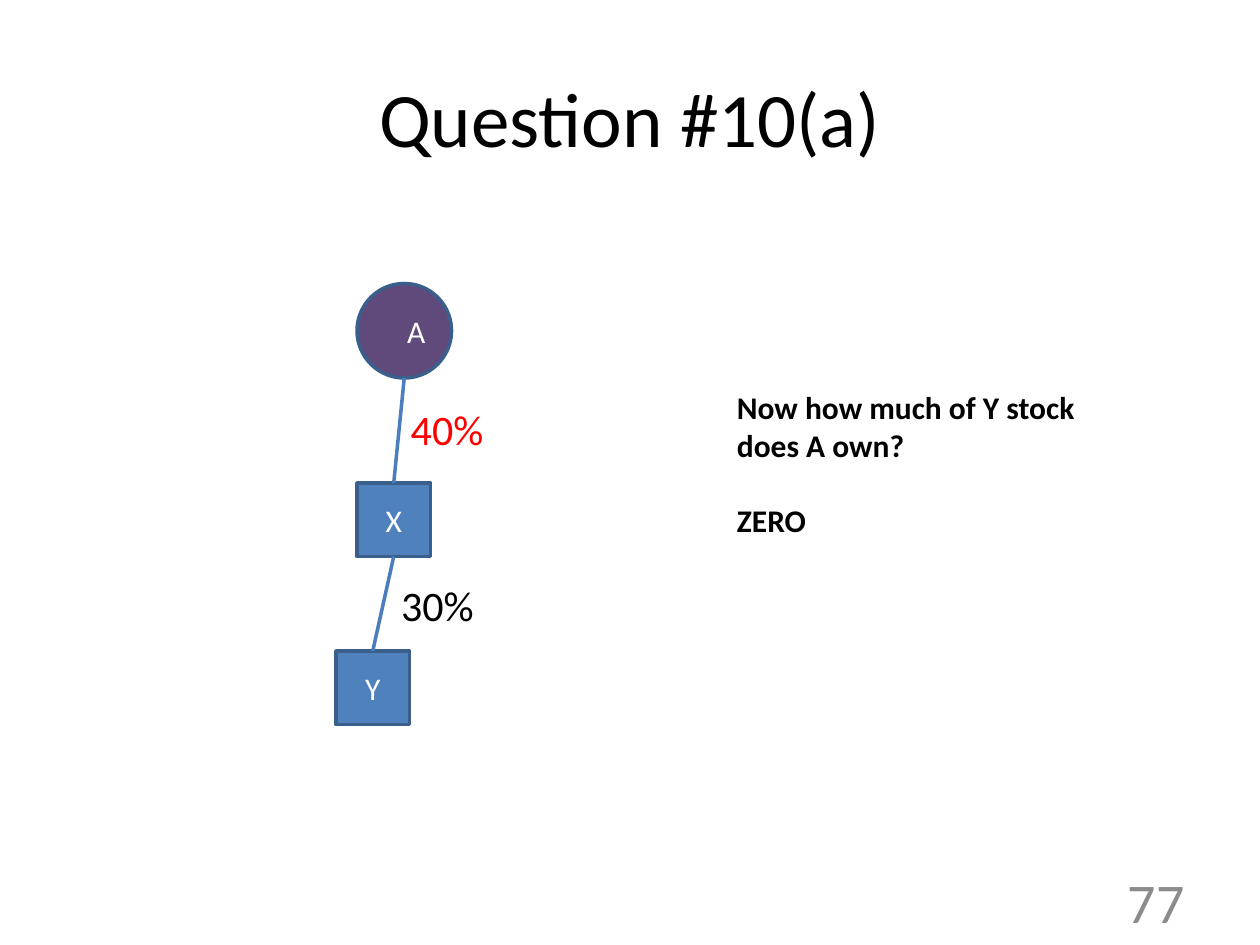
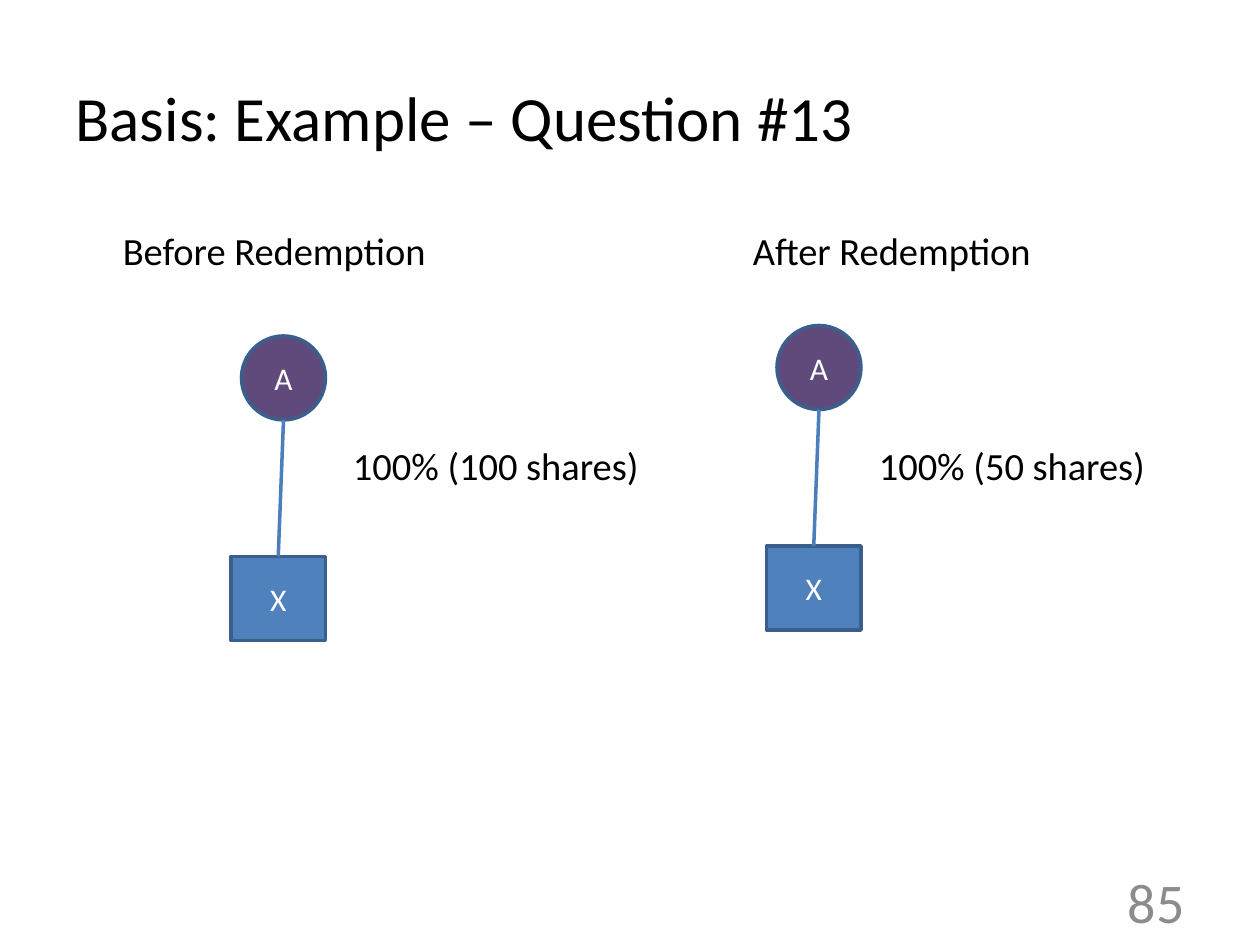
from dataclasses import dataclass

from lxml.etree import SubElement
from pptx import Presentation
from pptx.dml.color import RGBColor
from pptx.enum.shapes import MSO_CONNECTOR as CONN, MSO_SHAPE as SHAPE
from pptx.enum.text import MSO_ANCHOR as ANCHOR, MSO_AUTO_SIZE as AUTO, PP_ALIGN as ALIGN
from pptx.oxml.ns import qn
from pptx.util import Pt

# Shared style
FONT = "Calibri"
BLACK = RGBColor(0x00, 0x00, 0x00)
WHITE = RGBColor(0xFF, 0xFF, 0xFF)
RED = RGBColor(0xFF, 0x00, 0x00)
GRAY = RGBColor(0x8C, 0x8C, 0x8C)
PURPLE = RGBColor(0x60, 0x4A, 0x7B)
BLUE = RGBColor(0x4F, 0x81, 0xBD)
OUTLINE = RGBColor(0x3A, 0x5F, 0x8C)
LINK = RGBColor(0x4B, 0x7E, 0xBC)


@dataclass
class Owner:
    """A person (circle) or a corporation (box), in points."""
    label: str
    left: float
    top: float
    width: float
    height: float
    person: bool = False
    align: ALIGN = ALIGN.CENTER


@dataclass
class Line:
    """One line of body text with its gap, indent and second column, in points."""
    text: str
    indent: float
    gap: float = 0
    column: float = 0
    color: RGBColor = BLACK


def style(p, size: float, color: RGBColor, align: ALIGN = ALIGN.LEFT, bold: bool = False) -> None:
    p.alignment = align
    for r in p.runs:
        r.font.name, r.font.size, r.font.bold = FONT, Pt(size), bold
        r.font.color.rgb = color


def place(sp, left: float, top: float, width: float, height: float) -> None:
    sp.left, sp.top, sp.width, sp.height = Pt(left), Pt(top), Pt(width), Pt(height)


def add_slide(prs, title: str, size: float, align: ALIGN, number: str):
    s = prs.slides.add_slide(prs.slide_layouts[1])
    sp = s.shapes.title
    place(sp, 36, 21.6, 648, 90)
    sp.text_frame.text = title
    sp.text_frame.vertical_anchor = ANCHOR.MIDDLE
    style(sp.text_frame.paragraphs[0], size, BLACK, align)
    # Slide number
    tf = s.shapes.add_textbox(Pt(516), Pt(500.5), Pt(168), Pt(28.75)).text_frame
    tf.word_wrap = True
    tf.vertical_anchor = ANCHOR.MIDDLE
    tf.text = number
    style(tf.paragraphs[0], 32, GRAY, ALIGN.RIGHT)
    return s


def fill_body(s, lines: list[Line], size: float, inset: float = 3.6) -> None:
    sp = s.placeholders[1]
    place(sp, 36, 126, 648, 356.4)
    tf = sp.text_frame
    tf.auto_size = AUTO.NONE
    tf.margin_top = Pt(inset)
    tf.text = "\n".join(line.text for line in lines)
    for p, line in zip(tf.paragraphs, lines):
        style(p, size, line.color)
        p.space_before = Pt(line.gap)
        # Indent without bullet
        pPr = p._p.get_or_add_pPr()
        pPr.set("marL", str(Pt(line.indent)))
        pPr.set("indent", "0")
        SubElement(pPr, qn("a:buNone"))
        # Tab stop, and a default tab distance that leads to the same place
        if line.column:
            pPr.set("defTabSz", str(Pt(line.column - line.indent)))
            stops = SubElement(pPr, qn("a:tabLst"))
            SubElement(stops, qn("a:tab"), pos=str(Pt(line.column)), algn="l")


def add_owner(s, o: Owner):
    kind = SHAPE.OVAL if o.person else SHAPE.RECTANGLE
    sp = s.shapes.add_shape(kind, Pt(o.left), Pt(o.top), Pt(o.width), Pt(o.height))
    sp.shadow.inherit = False
    sp.fill.solid()
    sp.fill.fore_color.rgb = PURPLE if o.person else BLUE
    sp.line.color.rgb = OUTLINE
    sp.line.width = Pt(2)
    tf = sp.text_frame
    tf.vertical_anchor = ANCHOR.MIDDLE
    tf.text = o.label
    style(tf.paragraphs[0], 18, WHITE, o.align)
    return sp


def add_chain(s, owners: list[Owner]) -> None:
    """Draw the owners from top to bottom, each linked to the next."""
    shapes = [add_owner(s, o) for o in owners]
    for o, upper, lower in zip(owners, shapes, shapes[1:]):
        c = s.shapes.add_connector(CONN.STRAIGHT, upper.left + upper.width // 2, upper.top + upper.height,
                                   lower.left + lower.width // 2, lower.top)
        if not o.person:
            c.begin_connect(upper, 2)
        c.end_connect(lower, 0)
        c.line.color.rgb = LINK
        c.line.width = Pt(2)
        SubElement(c._element.spPr, qn("a:effectLst"))


def build_question_10(prs) -> None:
    s = add_slide(prs, "Question #10(a)", 44, ALIGN.CENTER, "77")
    fill_body(s, [Line("40%", 191.5, color=RED), Line("30%", 186, gap=71.5)], 24, inset=104.75)
    add_chain(s, [
        Owner("A", 204, 162, 54, 54, person=True, align=ALIGN.RIGHT),
        Owner("X", 204, 276, 42, 42),
        Owner("Y", 192, 372, 42, 42),
    ])
    # Question and answer
    tf = s.shapes.add_textbox(Pt(414), Pt(218.16), Pt(234), Pt(94.5)).text_frame
    tf.word_wrap = True
    tf.text = "Now how much of Y stock does A own?\nZERO"
    for p in tf.paragraphs:
        style(p, 18, BLACK, bold=True)
    tf.paragraphs[1].space_before = Pt(21.5)


def build_question_13(prs) -> None:
    s = add_slide(prs, "Basis: Example – Question #13", 36, ALIGN.LEFT, "85")
    fill_body(s, [
        Line("Before Redemption\tAfter Redemption", 27, column=387),
        Line("100% (100 shares)\t100% (50 shares)", 158.5, gap=96.5, column=459),
    ], 22)
    # Ownership before and after
    for left, top in ((132, 192), (438, 186)):
        add_chain(s, [
            Owner("A", left + 6, top, 48, 48, person=True),
            Owner("X", left, top + 126, 54, 48),
        ])


def main() -> None:
    prs = Presentation()
    prs.slide_width, prs.slide_height = Pt(720), Pt(540)
    build_question_10(prs)
    build_question_13(prs)
    prs.save("out.pptx")


if __name__ == "__main__":
    main()
